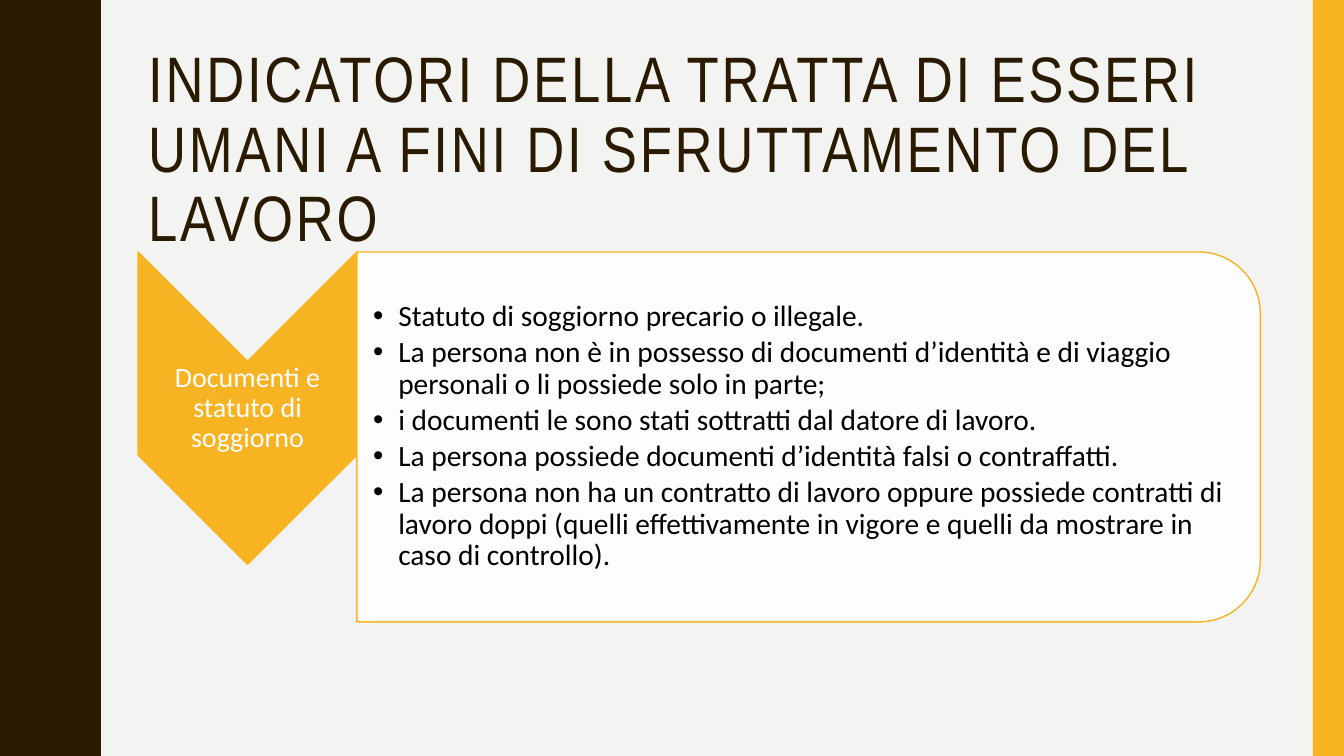
from lxml import etree
from pptx import Presentation
from pptx.dml.color import RGBColor
from pptx.enum.shapes import MSO_SHAPE
from pptx.enum.text import MSO_ANCHOR, MSO_AUTO_SIZE, PP_ALIGN
from pptx.oxml.ns import qn
from pptx.util import Inches, Pt

BROWN = RGBColor(0x2A, 0x1A, 0x00)
AMBER = RGBColor(0xF8, 0xB3, 0x23)
PAPER = RGBColor(0xF3, 0xF3, 0xF2)
WHITE = RGBColor(0xFF, 0xFF, 0xFF)
BLACK = RGBColor(0x00, 0x00, 0x00)

WIDTH, HEIGHT = 13.33, 7.5
WAVE_X = [0.78, 0.78, 0.79, 0.8, 0.81, 0.83, 0.85, 0.87, 0.89, 0.91, 0.93, 0.95, 0.96, 0.97]
WAVE_Y = [0, 0.07, 0.14, 0.2, 0.25, 0.29, 0.33, 0.38, 0.42, 0.46, 0.5, 0.55, 0.61, 0.68]
HALF_WAVE = 0.75

TITLE = "INDICATORI DELLA TRATTA DI ESSERI\vUMANI A FINI DI SFRUTTAMENTO DEL LAVORO"
TOPIC = "Documenti e statuto di soggiorno"
INDICATORS = [
    "Statuto di soggiorno precario o illegale.",
    "La persona non è in possesso di documenti d’identità e di viaggio personali o li possiede solo in parte;",
    "i documenti le sono stati sottratti dal datore di lavoro.",
    "La persona possiede documenti d’identità falsi o contraffatti.",
    "La persona non ha un contratto di lavoro oppure possiede contratti di lavoro doppi "
    "(quelli effettivamente in vigore e quelli da mostrare in caso di controllo).",
]


def paint(sp, fill, line=None):
    sp.shadow.inherit = False
    sp.fill.solid()
    sp.fill.fore_color.rgb = fill
    if line is None:
        sp.line.fill.background()
    else:
        sp.line.color.rgb = line
        sp.line.width = Pt(1)


def place(sp, left, top, width, height):
    sp.left, sp.top = Inches(left), Inches(top)
    sp.width, sp.height = Inches(width), Inches(height)


def set_frame(tf, anchor, left, top, right, bottom):
    tf.word_wrap = True
    tf.auto_size = MSO_AUTO_SIZE.NONE
    tf.vertical_anchor = anchor
    tf.margin_left, tf.margin_top = Inches(left), Inches(top)
    tf.margin_right, tf.margin_bottom = Inches(right), Inches(bottom)


def format_paragraph(p, font, size, color, align=PP_ALIGN.LEFT, after=0):
    p.font.name, p.font.size, p.font.color.rgb = font, Pt(size), color
    p.alignment = align
    p.line_spacing = 0.9
    p.space_before, p.space_after = Pt(0), Pt(after)


def add_turned_shape(slide, kind, left, top, width, height):
    """Add a shape turned by 90 degrees that covers the given box."""
    sp = slide.shapes.add_shape(
        kind, Inches(left + (width - height) / 2), Inches(top + (height - width) / 2),
        Inches(height), Inches(width))
    sp.rotation = 90
    return sp


def add_wavy_band(slide):
    points = []
    for i in range(round(HEIGHT / HALF_WAVE)):
        for x, y in zip(WAVE_X, WAVE_Y):
            points.append((x if i % 2 == 0 else WAVE_X[0] + WAVE_X[-1] - x, i * HALF_WAVE + y))
    points += [(WAVE_X[0], HEIGHT), (0, HEIGHT)]
    builder = slide.shapes.build_freeform(0, 0, scale=Inches(1))
    builder.add_line_segments(points, close=True)
    paint(builder.convert_to_shape(), BROWN)


def add_side_bar(slide, left, width):
    sp = slide.shapes.add_shape(
        MSO_SHAPE.RECTANGLE, Inches(left), 0, Inches(width), Inches(HEIGHT))
    paint(sp, AMBER)


def fill_title(slide, left, top, width, height):
    sp = slide.shapes.title
    place(sp, left, top, width, height)
    tf = sp.text_frame
    set_frame(tf, MSO_ANCHOR.TOP, 0.1, 0.05, 0.1, 0.05)
    tf.text = TITLE
    p = tf.paragraphs[0]
    format_paragraph(p, "Arial Narrow", 45.9, BROWN)
    for r in p.runs:
        r.font._element.set("spc", "200")


def add_topic(slide, left, top, width, height):
    paint(add_turned_shape(slide, MSO_SHAPE.CHEVRON, left, top, width, height), AMBER, AMBER)
    notch = width / 2
    box = slide.shapes.add_textbox(
        Inches(left), Inches(top + notch), Inches(width), Inches(height - 2 * notch))
    tf = box.text_frame
    set_frame(tf, MSO_ANCHOR.MIDDLE, 0.01, 0.01, 0.01, 0.01)
    tf.text = TOPIC
    format_paragraph(tf.paragraphs[0], "Calibri", 20, WHITE, PP_ALIGN.CENTER)


def add_bullet(p):
    pPr = p._p.get_or_add_pPr()
    pPr.set("marL", str(Inches(0.25)))
    pPr.set("indent", str(-Inches(0.25)))
    bullet = etree.Element(qn("a:buChar"), char="•")
    pPr.find(qn("a:defRPr")).addprevious(bullet)


def add_indicators(slide, left, top, width, height):
    panel = add_turned_shape(slide, MSO_SHAPE.ROUND_2_SAME_RECTANGLE, left, top, width, height)
    paint(panel, WHITE, AMBER)
    color = panel.fill._xPr.find(qn("a:solidFill"))[0]
    etree.SubElement(color, qn("a:alpha"), val="90000")

    body = slide.placeholders[1]
    slide.shapes._spTree.append(body._element)  # in front of the panel
    place(body, left, top + 0.18, width - 0.18, height - 0.36)
    tf = body.text_frame
    set_frame(tf, MSO_ANCHOR.MIDDLE, 0.16, 0.01, 0.01, 0.01)
    tf.text = "\n".join(INDICATORS)
    for p in tf.paragraphs:
        p.level = 1
        format_paragraph(p, "Calibri", 21, BLACK, after=3)
        add_bullet(p)


def main():
    prs = Presentation()
    prs.slide_width, prs.slide_height = Inches(WIDTH), Inches(HEIGHT)
    slide = prs.slides.add_slide(prs.slide_layouts[1])
    slide.background.fill.solid()
    slide.background.fill.fore_color.rgb = PAPER
    add_wavy_band(slide)
    add_side_bar(slide, 13.02, 0.31)
    fill_title(slide, 1.37, 0.42, 11.13, 1.63)
    add_topic(slide, 1.37, 2.5, 2.17, 3.1)
    add_indicators(slide, 3.54, 2.5, 8.96, 3.67)
    prs.save("out.pptx")


if __name__ == "__main__":
    main()
